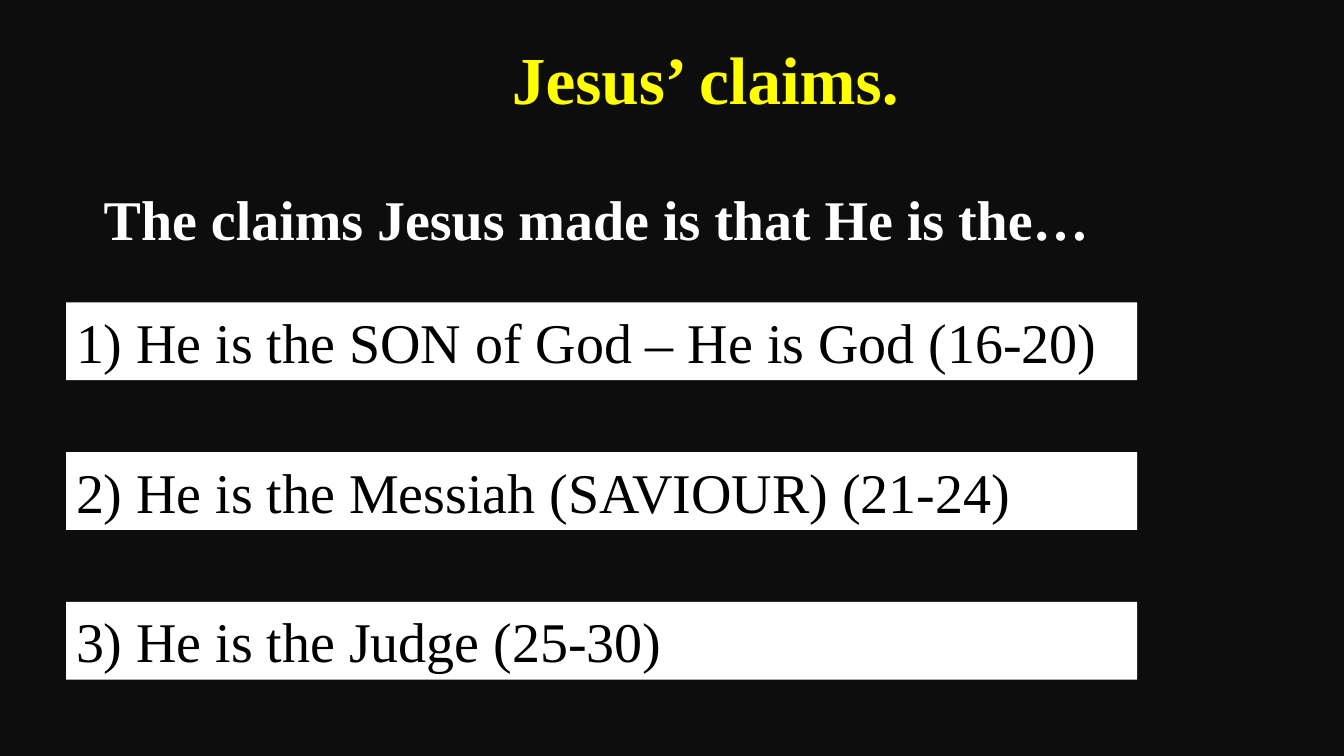
from pptx import Presentation
from pptx.dml.color import RGBColor
from pptx.enum import shapes, text
from pptx.util import Pt

FONT = "Times New Roman"
CLAIMS = (
    "1) He is the SON of God – He is God (16-20)",
    "2) He is the Messiah (SAVIOUR) (21-24)",
    "3) He is the Judge (25-30)",
)
FIRST_CLAIM_TOP = 216
CLAIM_STEP = 107


def paint(fill, color):
    fill.solid()
    fill.fore_color.rgb = RGBColor.from_string(color)


def place(box, left, top, width, height):
    box.left, box.top = Pt(left), Pt(top)
    box.width, box.height = Pt(width), Pt(height)


def write(box, words, size, color, bold=False):
    """Put one left-aligned line of text at the top of the box."""
    frame = box.text_frame
    frame.text = words
    frame.word_wrap = True
    frame.auto_size = text.MSO_AUTO_SIZE.SHAPE_TO_FIT_TEXT
    frame.vertical_anchor = text.MSO_ANCHOR.TOP
    paragraph = frame.paragraphs[0]
    paragraph.alignment = text.PP_ALIGN.LEFT
    font = paragraph.runs[0].font
    font.name, font.size, font.bold = FONT, Pt(size), bold
    font.color.rgb = RGBColor.from_string(color)


def add_title(page, words):
    title = page.shapes.title
    place(title, 358.5, 23, 294, 65.5)
    write(title, words, 48, "FFFF00", bold=True)
    title.text_frame.word_wrap = False
    title.text_frame.paragraphs[0].space_after = Pt(2)


def add_lead(page, words):
    lead = page.shapes.add_textbox(Pt(67), Pt(128), Pt(795.5), Pt(55.5))
    write(lead, words, 40, "FFFFFF", bold=True)


def add_claim(page, words, top):
    bar = page.shapes.add_shape(
        shapes.MSO_SHAPE.RECTANGLE, Pt(47.25), Pt(top), Pt(765), Pt(55.5))
    bar.shadow.inherit = False
    paint(bar.fill, "FFFFFF")
    bar.line.fill.background()
    write(bar, words, 40, "000000")


def main():
    deck = Presentation()
    deck.slide_width, deck.slide_height = Pt(960), Pt(540)
    page = deck.slides.add_slide(deck.slide_layouts.get_by_name("Title Only"))
    paint(page.background.fill, "0D0D0D")
    add_title(page, "Jesus’ claims.")
    add_lead(page, "The claims Jesus made is that He is the…")
    for index, claim in enumerate(CLAIMS):
        add_claim(page, claim, FIRST_CLAIM_TOP + index * CLAIM_STEP)
    deck.save("out.pptx")


if __name__ == "__main__":
    main()
